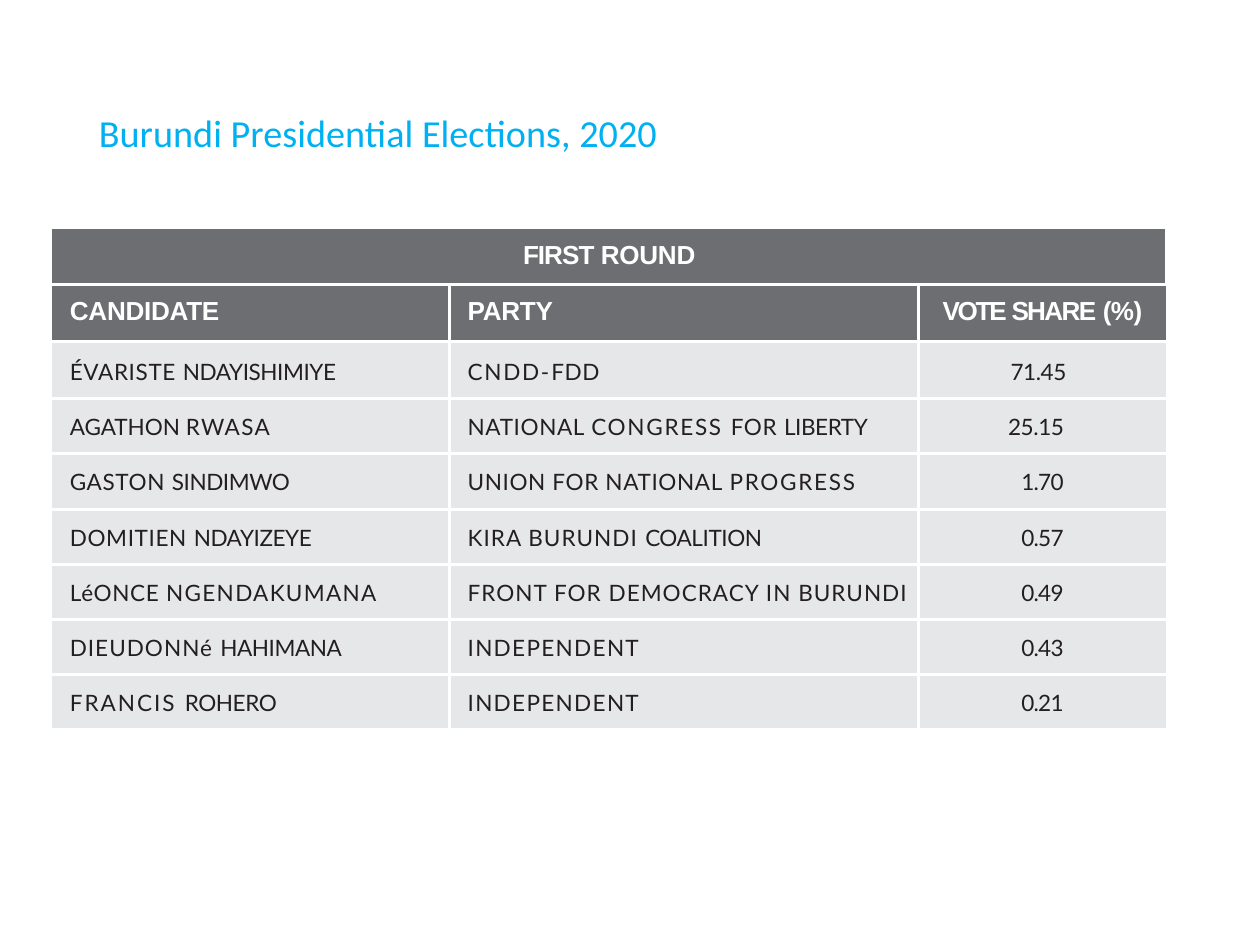
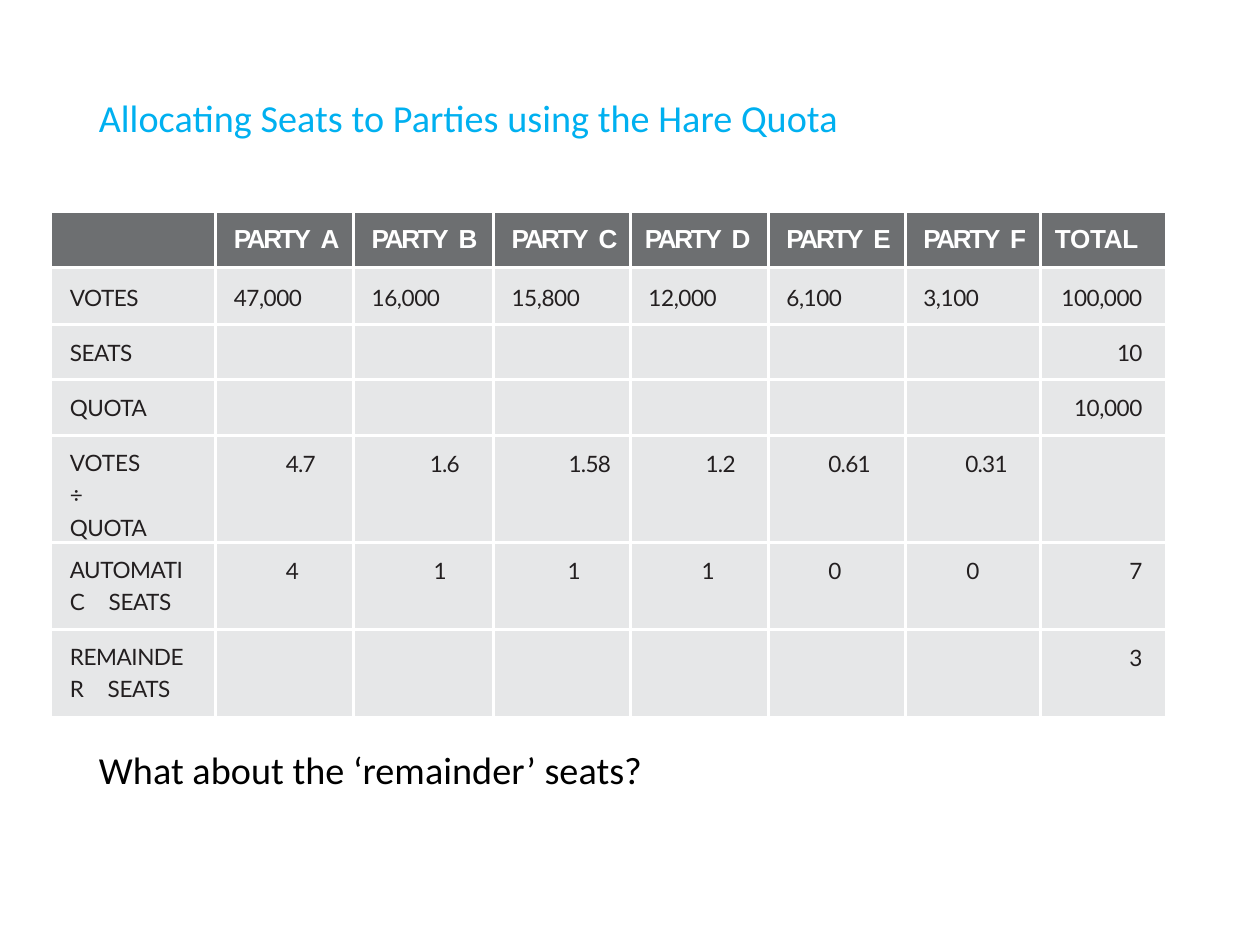
from lxml import etree
from pptx import Presentation
from pptx import util as u
from pptx.dml.color import RGBColor
from pptx.enum import text
from pptx.oxml.ns import qn

PX = 914400 / 250
COLORS = {
    "title": "00B0F0", "note": "000000", "body": "231F20", "white": "FFFFFF",
    "header": "6D6E71", "seat_header": "6D6F71", "row": "E6E7E8",
}
LEFT, CENTER, RIGHT = text.PP_ALIGN.LEFT, text.PP_ALIGN.CENTER, text.PP_ALIGN.RIGHT
INDENT = 18


def write_line(box, wording, left, top, width, color):
    box.left, box.top = int(left * PX), int(top * PX)
    box.width, box.height = int(width * PX), int(50 * PX)
    frame = box.text_frame
    frame.text = wording
    frame.word_wrap = True
    frame.auto_size = text.MSO_AUTO_SIZE.NONE
    frame.vertical_anchor = text.MSO_ANCHOR.TOP
    frame.margin_left = frame.margin_top = int(3 * PX)
    frame.margin_right = frame.margin_bottom = 0
    para = frame.paragraphs[0]
    para.alignment = LEFT
    font = para.runs[0].font
    font.name, font.size = "Calibri", u.Pt(11)
    font.color.rgb = RGBColor.from_string(COLORS[color])


def draw_table(page, top, widths, heights, rows, headers, header_fill, layouts, loose=()):
    frame = page.shapes.add_table(
        len(heights), len(widths), int(52 * PX), int(top * PX),
        int(sum(widths) * PX), int(sum(heights) * PX))
    table = frame.table
    table.first_row = table.horz_banding = False
    for column, width in zip(table.columns, widths):
        column.width = int(width * PX)
    for row, height in zip(table.rows, heights):
        row.height = int(height * PX)
    for i, values in enumerate(rows):
        header = i < headers
        inset = 12 if header else 17 if i == headers else 15
        for j, spans in enumerate(values):
            cell = table.cell(i, j)
            align, left, right = layouts.get((i, j), layouts.get(j, (LEFT, INDENT, 0)))
            cell.margin_left, cell.margin_right = int(left * PX), int(right * PX)
            cell.margin_top, cell.margin_bottom = int(inset * PX), 0
            cell.fill.solid()
            cell.fill.fore_color.rgb = RGBColor.from_string(COLORS[header_fill if header else "row"])
            para = cell.text_frame.paragraphs[0]
            para.alignment = align
            if j == 0 and i in loose:
                cell.margin_top = int(8 * PX)
                para.line_spacing = 1.21
            size = 7.5 if header else 6.5
            para._p.get_or_add_endParaRPr().set("sz", str(int(size * 100)))
            for wording, spacing in spans:
                span = para.add_run()
                span.text = wording
                span.font.name = "Arial" if header else "Lato"
                span.font.size, span.font.bold = u.Pt(size), header
                span.font.color.rgb = RGBColor.from_string(COLORS["white" if header else "body"])
                span._r.get_or_add_rPr().set("spc", str(spacing))
            inner = {
                "a:lnL": j > 0, "a:lnR": j < len(widths) - 1,
                "a:lnT": i > 0, "a:lnB": i < len(heights) - 1,
            }
            props = cell._tc.get_or_add_tcPr()
            for place, (side, drawn) in enumerate(inner.items()):
                line = etree.Element(qn(side), w=str(u.Pt(1)))
                if drawn:
                    solid = etree.SubElement(line, qn("a:solidFill"))
                    etree.SubElement(solid, qn("a:srgbClr"), val=COLORS["white"])
                else:
                    etree.SubElement(line, qn("a:noFill"))
                props.insert(place, line)
    return table


deck = Presentation()
deck.slide_width, deck.slide_height = u.Pt(363), u.Pt(272.5)
title_only = deck.slide_layouts[5]

page = deck.slides.add_slide(title_only)
write_line(page.shapes.title, "Burundi Presidential Elections, 2020", 96, 106, 583, "title")
election_rows = [
    [[("FIRST ", -30), ("ROUND", -10)], [], []],
    [[("CANDIDATE", -10)], [("PARTY", -10)],
     [("VOTE ", -70), ("SHARE", -50), (" (%)", -20)]],
    [[("ÉVARISTE ", 20), ("NDAYISHIMIYE", -10)],
     [("CNDD-", 50), ("FDD", 20)], [("71.45", -10)]],
    [[("AGATHON ", 0), ("RWASA", 40)],
     [("NATIONAL ", 20), ("CONGRESS ", 50), ("FOR ", 20), ("LIBERTY", -10)], [("25.15", -10)]],
    [[("GASTON ", 20), ("SINDIMWO", -10)],
     [("UNION FOR NATIONAL ", 20), ("PROGRESS", 50)], [("1.70", -20)]],
    [[("DOMITIEN ", 20), ("NDAYIZEYE", -10)],
     [("KIRA BURUNDI ", 30), ("COALITION", -10)], [("0.57", -20)]],
    [[("LéONCE ", 20), ("NGENDAKUMANA", 40)],
     [("FRONT FOR DEMOCRACY IN BURUNDI", 30)], [("0.49", -20)]],
    [[("DIEUDONNé ", 30), ("HAHIMANA", -10)], [("INDEPENDENT", 40)], [("0.43", -20)]],
    [[("FRANCIS ", 60), ("ROHERO", -10)], [("INDEPENDENT", 40)], [("0.21", -20)]],
]
election_layouts = {
    2: (CENTER, 0, 0), (0, 0): (CENTER, 0, 0),
    (2, 2): (CENTER, 0, 8), (3, 2): (CENTER, 0, 13),
}
election = draw_table(
    page, 229, [398, 469, 248], [56, 57, 57, 55, 56, 55, 55, 55, 54],
    election_rows, 2, "header", election_layouts)
election.cell(0, 0).merge(election.cell(0, 2))

page = deck.slides.add_slide(title_only)
write_line(page.shapes.title, "Allocating Seats to Parties using the Hare Quota", 96, 91, 783, "title")
votes = ["47,000", "16,000", "15,800", "12,000", "6,100", "3,100", "100,000"]
ratios = ["4.7", "1.6", "1.58", "1.2", "0.61", "0.31"]
blanks = [[] for letter in "ABCDEF"]
parties = [[("PARTY", -70), (" ", 70), (letter, -60)] for letter in "ABCDEF"]
seat_rows = [
    [[]] + parties + [[("TOTAL", -10)]],
    [[("VOTES", -10)]] + [[(value, -10)] for value in votes],
    [[("SEATS", -10)]] + blanks + [[("10", -20)]],
    [[("QUOTA", -10)]] + blanks + [[("10,000", -10)]],
    [[("VOTES ", 0), ("÷ ", -50), ("QUOTA", -10)]] + [[(value, -20)] for value in ratios] + [[]],
    [[("AUTOMATIC", -10), (" ", 520), ("SEATS", -10)]] + [[(value, -50)] for value in "4111007"],
    [[("REMAINDER", -10), (" ", 520), ("SEATS", -10)]] + blanks + [[("3", -50)]],
]
seat_layouts = {
    7: (RIGHT, 0, 23), (0, 7): (RIGHT, 0, 27), (0, 4): (RIGHT, 0, 18),
    (4, 0): (LEFT, INDENT, 65), (5, 0): (LEFT, INDENT, 25), (6, 0): (LEFT, INDENT, 25),
    (4, 4): (RIGHT, 0, 33),
}
for column, indent in {1: 70, 2: 76, 3: 75, 5: 60, 6: 60}.items():
    seat_layouts[4, column] = (LEFT, indent, 0)
for column, indent in enumerate([70, 80, 74, 71, 60, 61], 1):
    seat_layouts[5, column] = (LEFT, indent, 0)
draw_table(
    page, 213, [164, 138, 140, 137, 138, 137, 135, 125], [55, 57, 55, 56, 107, 87, 87],
    seat_rows, 1, "seat_header", seat_layouts, loose=(4, 5, 6))
note = page.shapes.add_textbox(0, 0, 0, 0)
write_line(note, "What about the ‘remainder’ seats?", 96, 744, 558, "note")

deck.save("out.pptx")
